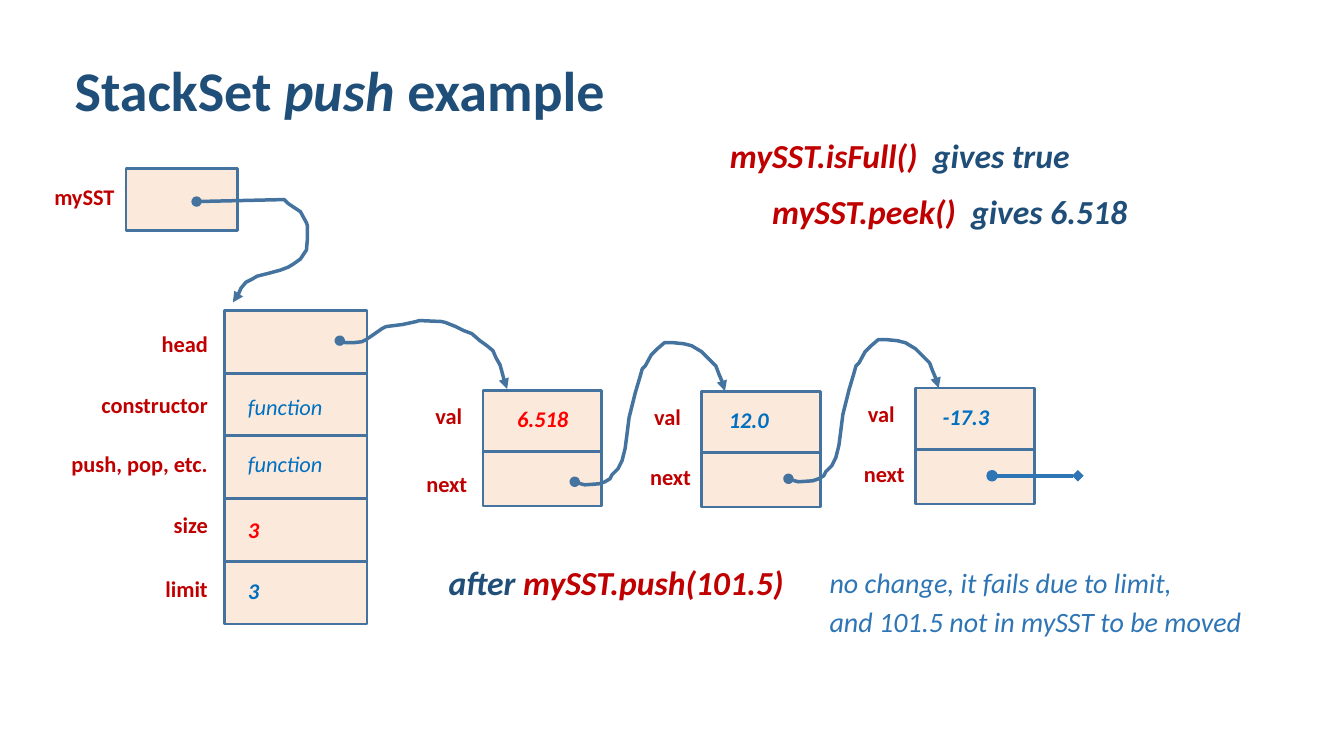
from lxml import etree
from pptx import Presentation
from pptx import util as u
from pptx.dml.color import RGBColor
from pptx.enum import shapes, text
from pptx.oxml.ns import qn

COLORS = {
    "navy": "1F4E79", "label": "C00000", "value": "0070C0", "changed": "FF0000",
    "note": "2E75B6", "cell": "F4B183", "outline": "43739E",
}
FIELDS = [
    ("head", 3.23, None),
    ("constructor", 3.83, ("function", 3.85, "value", False)),
    ("push, pop, etc.", 4.42, ("function", 4.42, "value", False)),
    ("size", 5.02, ("3", 5.07, "changed", True)),
    ("limit", 5.66, ("3", 5.68, "value", True)),
]
NODES = [
    (4.79, 3.87, "6.518", "changed", 0.24, (-0.66, 0.74)),
    (6.96, 3.88, "12.0", "value", 0.17, (-0.61, 0.67)),
    (9.08, 3.85, "-17.3", "value", 0.17, (-0.61, 0.67)),
]
MYSST_LINK = [
    (1.95, 2), (2.82, 1.98), (2.86, 2.02), (2.92, 2.06), (2.98, 2.1), (3.04, 2.21),
    (3.05, 2.24), (3.05, 2.36), (3.04, 2.48), (2.98, 2.57), (2.91, 2.62),
    (2.86, 2.65), (2.78, 2.68), (2.67, 2.71), (2.55, 2.74), (2.5, 2.77),
    (2.44, 2.8), (2.39, 2.86), (2.36, 2.93), (2.33, 2.96), (2.31, 3),
]
HEAD_LINK = [
    (3.37, 3.38), (3.43, 3.4), (3.51, 3.4), (3.59, 3.39), (3.63, 3.37), (3.69, 3.33),
    (3.79, 3.26), (3.83, 3.24), (3.99, 3.22), (4.13, 3.19), (4.16, 3.18),
    (4.38, 3.19), (4.42, 3.2), (4.52, 3.24), (4.6, 3.28), (4.68, 3.31),
    (4.76, 3.38), (4.83, 3.43), (4.89, 3.48), (4.92, 3.55), (4.96, 3.62),
    (4.99, 3.73), (5, 3.77), (5.03, 3.83), (5.03, 3.86),
]
NEXT_LINK = [
    (5.7, 4.78), (5.76, 4.8), (5.8, 4.81), (5.94, 4.8), (6, 4.78), (6.05, 4.75),
    (6.07, 4.71), (6.13, 4.65), (6.17, 4.57), (6.2, 4.45), (6.22, 4.3),
    (6.24, 4.14), (6.28, 3.98), (6.3, 3.9), (6.35, 3.73), (6.37, 3.66),
    (6.4, 3.63), (6.46, 3.52), (6.52, 3.46), (6.59, 3.4), (6.68, 3.4),
    (6.78, 3.41), (6.86, 3.43), (6.96, 3.49), (7.04, 3.57), (7.1, 3.63),
    (7.13, 3.71), (7.16, 3.78), (7.18, 3.86), (7.19, 3.88),
]
LINK_STEP = (2.12, -0.03)


def rgb(color):
    return RGBColor.from_string(COLORS[color])


def add_runs(paragraph, runs, size, bold=True):
    for wording, color, italic in runs:
        run = paragraph.add_run()
        run.text = wording
        run.font.name = "Calibri"
        run.font.size = u.Pt(size)
        run.font.bold = bold
        run.font.italic = italic
        run.font.color.rgb = rgb(color)


def add_words(slide, left, top, width, height, runs, size=16, bold=True, right=False):
    words = slide.shapes.add_textbox(*map(u.Inches, (left, top, width, height)))
    words.text_frame.word_wrap = True
    paragraph = words.text_frame.paragraphs[0]
    paragraph.alignment = text.PP_ALIGN.RIGHT if right else text.PP_ALIGN.LEFT
    add_runs(paragraph, runs, size, bold)


def add_cell(slide, left, top, width, height):
    cell = slide.shapes.add_shape(
        shapes.MSO_SHAPE.RECTANGLE, *map(u.Inches, (left, top, width, height)))
    cell.shadow.inherit = False
    cell.fill.solid()
    cell.fill.fore_color.rgb = rgb("cell")
    shade = next(cell.fill._xPr.iter(qn("a:srgbClr")))
    etree.SubElement(shade, qn("a:alpha"), val="28000")
    cell.line.color.rgb = rgb("outline")
    cell.line.width = u.Pt(2)


def style_link(link, color, width, tail):
    link.line.color.rgb = rgb(color)
    link.line.width = u.Pt(width)
    stroke = link.line._get_or_add_ln()
    etree.SubElement(stroke, qn("a:headEnd"), type="oval")
    etree.SubElement(stroke, qn("a:tailEnd"), type=tail)


def add_curved_link(slide, points, shift=(0, 0)):
    start, *rest = [(u.Inches(x + shift[0]), u.Inches(y + shift[1])) for x, y in points]
    outline = slide.shapes.build_freeform(*start)
    outline.add_line_segments(rest, close=False)
    link = outline.convert_to_shape()
    link.shadow.inherit = False
    link.fill.background()
    style_link(link, "outline", 2.5, "triangle")


def add_null_link(slide):
    link = slide.shapes.add_connector(
        shapes.MSO_CONNECTOR.STRAIGHT, *map(u.Inches, (9.84, 4.72, 10.69, 4.72)))
    style_link(link, "note", 2.75, "diamond")
    etree.SubElement(link._element.spPr, qn("a:effectLst"))


def add_title(slide):
    title = slide.shapes.title
    title.left, title.top, title.width, title.height = map(u.Inches, (0.64, 0.5, 7.73, 0.77))
    title.text_frame.vertical_anchor = text.MSO_ANCHOR.TOP
    paragraph = title.text_frame.paragraphs[0]
    paragraph.alignment = text.PP_ALIGN.LEFT
    add_runs(paragraph, [("StackSet ", "navy", False), ("push", "navy", True),
                         (" example", "navy", False)], 40)


def add_stack(slide):
    add_words(slide, 0.44, 1.77, 0.84, 0.45, [("mySST", "label", False)])
    add_cell(slide, 1.25, 1.67, 1.11, 0.62)
    for row, (field, label_top, content) in enumerate(FIELDS):
        add_cell(slide, 2.23, 3.08 + row * 0.6225, 1.41, 0.62)
        add_words(slide, 0.6, label_top, 1.56, 0.45, [(field, "label", False)], right=True)
        if content:
            value, top, color, bold = content
            add_words(slide, 2.36, top, 1.07, 0.45, [(value, color, True)], bold=bold)


def add_node(slide, left, top, value, color, indent, next_offset):
    add_cell(slide, left, top, 1.18, 0.61)
    add_cell(slide, left, top + 0.61, 1.18, 0.54)
    add_words(slide, left + indent, top + 0.1, 0.87, 0.51, [(value, color, True)])
    add_words(slide, left - 0.57, top + 0.07, 0.74, 0.51, [("val", "label", False)])
    add_words(slide, left + next_offset[0], top + next_offset[1], 0.74, 0.51,
              [("next", "label", False)])


def add_statements(slide):
    add_words(slide, 4.35, 5.53, 3.65, 0.5,
              [("after ", "navy", True), ("mySST.push(101.5)", "label", True)], 24)
    for left, top, call, outcome in [
        (7.14, 1.29, "mySST.isFull()  ", "gives true"),
        (7.56, 1.84, "mySST.peek()  ", "gives 6.518"),
    ]:
        add_words(slide, left, top, 4.72, 0.5,
                  [(call, "label", True), (outcome, "navy", True)], 24)
    for top, note in [(5.56, "no change, it fails due to limit,"),
                      (5.95, "and 101.5 not in mySST to be moved")]:
        add_words(slide, 8.13, top, 4.4, 0.44, [(note, "note", True)], 20, bold=False)


def main():
    deck = Presentation()
    deck.slide_width, deck.slide_height = u.Inches(13.33), u.Inches(7.5)
    slide = deck.slides.add_slide(deck.slide_layouts[5])
    add_title(slide)
    add_stack(slide)
    for node in NODES:
        add_node(slide, *node)
    add_curved_link(slide, MYSST_LINK)
    add_curved_link(slide, HEAD_LINK)
    add_curved_link(slide, NEXT_LINK)
    add_curved_link(slide, NEXT_LINK, LINK_STEP)
    add_null_link(slide)
    add_statements(slide)
    deck.save("out.pptx")


if __name__ == "__main__":
    main()
